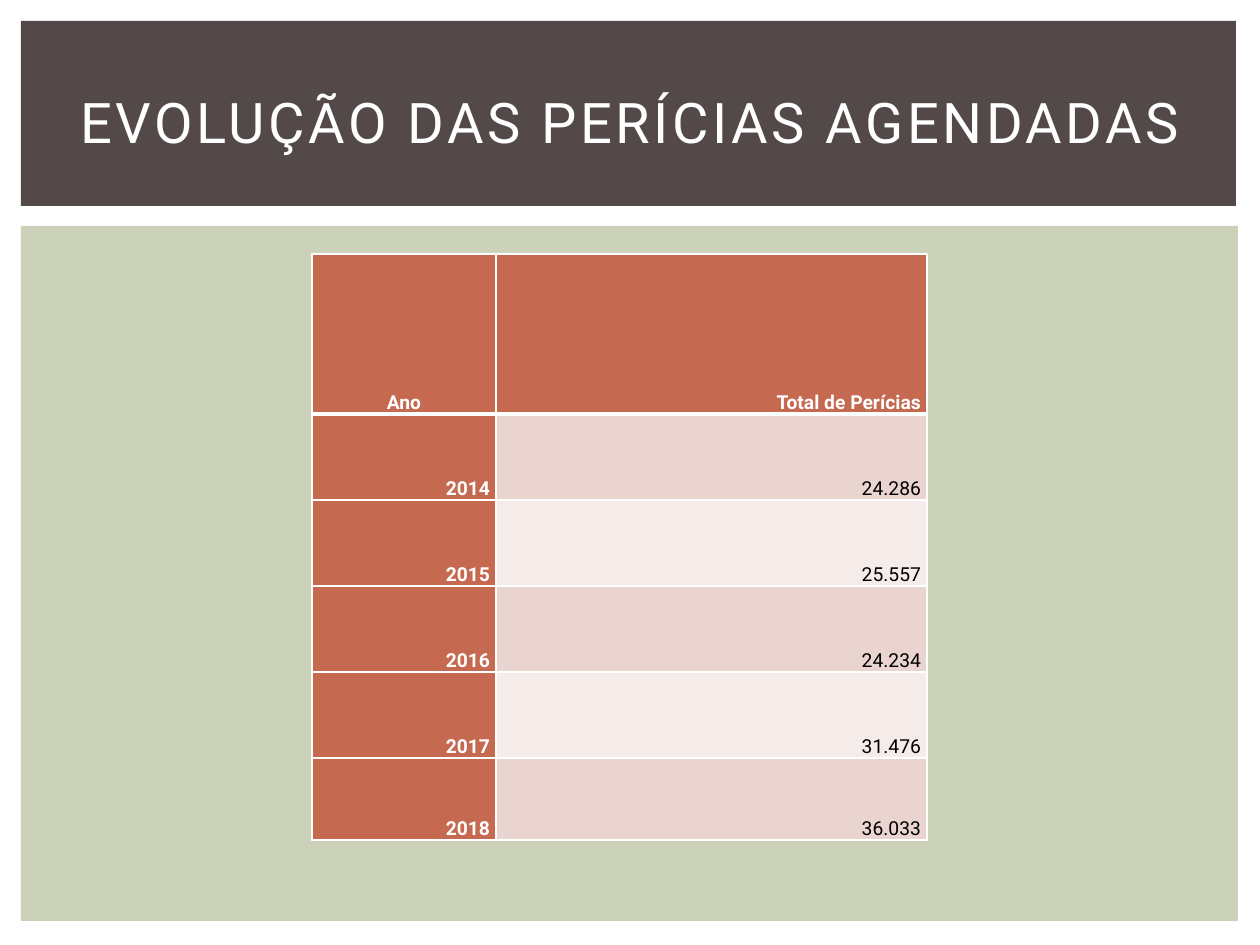
import pptx
import pptx.util
import pptx.dml.color
import pptx.enum.shapes
import pptx.enum.text
import pptx.oxml.ns
import lxml.etree

RGB = pptx.dml.color.RGBColor
ALIGN = pptx.enum.text.PP_ALIGN
ANCHOR = pptx.enum.text.MSO_ANCHOR
WHITE = RGB(0xFF, 0xFF, 0xFF)
BLACK = RGB(0x00, 0x00, 0x00)
BROWN = RGB(0x53, 0x49, 0x49)
SAGE = RGB(0xCC, 0xD1, 0xB9)
RUST = RGB(0xC6, 0x69, 0x51)
ROSE = RGB(0xEA, 0xD4, 0xD0)
PALE = RGB(0xF5, 0xEB, 0xE9)


def px(n):
    return pptx.util.Emu(n * 914400 // 126)


def write(frame, text, size=11, color=WHITE, bold=False,
          align=ALIGN.RIGHT, lines=1.0, space=0):
    par = frame.paragraphs[0]
    par.alignment = align
    par.line_spacing = lines
    run = par.add_run()
    run.text = text
    font = run.font
    font.name = "Roboto"
    font.size = pptx.util.Pt(size)
    font.bold = bold
    font.color.rgb = color
    if space:
        run.font._element.set("spc", str(space * 100))


deck = pptx.Presentation()
deck.slide_width, deck.slide_height = px(1260), px(945)
slide = deck.slides.add_slide(deck.slide_layouts[5])

# Body panel and title band
for box, color in [((21, 226, 1217, 695), SAGE), ((21, 21, 1215, 185), BROWN)]:
    panel = slide.shapes.add_shape(
        pptx.enum.shapes.MSO_SHAPE.RECTANGLE, *map(px, box))
    panel.shadow.inherit = False
    panel.fill.solid()
    panel.fill.fore_color.rgb = color
    panel.line.fill.background()

# Title, brought in front of its band
title = slide.shapes.title
title.left, title.top, title.width, title.height = map(px, (53, 49, 1155, 145))
title.element.getparent().append(title.element)
frame = title.text_frame
frame.word_wrap = True
frame.auto_size = pptx.enum.text.MSO_AUTO_SIZE.NONE
frame.vertical_anchor = ANCHOR.MIDDLE
write(frame, "EVOLUÇÃO DAS PERÍCIAS AGENDADAS", size=32,
      align=ALIGN.CENTER, space=2)

# Table of exams per year
data = [
    ("Ano", "Total de Perícias"),
    ("2014", "24.286"),
    ("2015", "25.557"),
    ("2016", "24.234"),
    ("2017", "31.476"),
    ("2018", "36.033"),
]
cols = [184, 431]
rows = [160, 86, 86, 86, 86, 82]
table = slide.shapes.add_table(
    len(rows), len(cols), px(312), px(254), px(sum(cols)), px(sum(rows))).table
for col, width in zip(table.columns, cols):
    col.width = px(width)
for row, height in zip(table.rows, rows):
    row.height = px(height)

qn = pptx.oxml.ns.qn
for r, pair in enumerate(data):
    for c, text in enumerate(pair):
        cell = table.cell(r, c)
        head = r == 0 or c == 0
        cell.margin_left = cell.margin_right = px(6)
        cell.margin_top = cell.margin_bottom = 0
        cell.vertical_anchor = ANCHOR.BOTTOM
        write(cell.text_frame, text, color=WHITE if head else BLACK, bold=head,
              align=ALIGN.CENTER if r == c == 0 else ALIGN.RIGHT, lines=1.15)

        # White borders, thick around the rule under the header
        props = cell._tc.get_or_add_tcPr()
        for side in "LRTB":
            thick = (r, side) in [(0, "B"), (1, "T")]
            edge = lxml.etree.SubElement(
                props, qn("a:ln" + side), w=str(pptx.util.Pt(3 if thick else 1)))
            fill = lxml.etree.SubElement(edge, qn("a:solidFill"))
            lxml.etree.SubElement(fill, qn("a:srgbClr"), val=str(WHITE))
        cell.fill.solid()
        cell.fill.fore_color.rgb = RUST if head else ROSE if r % 2 else PALE

deck.save("out.pptx")
